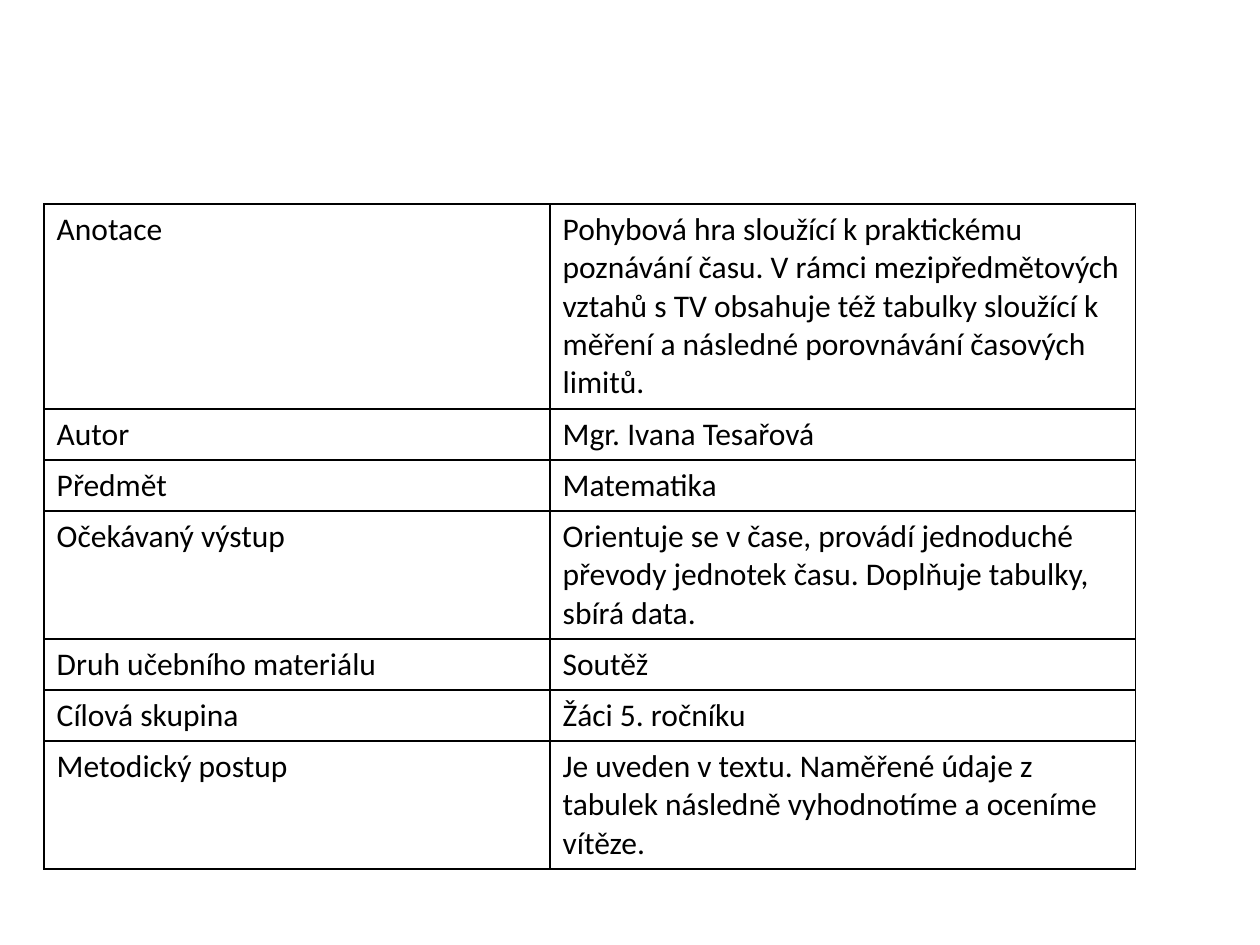
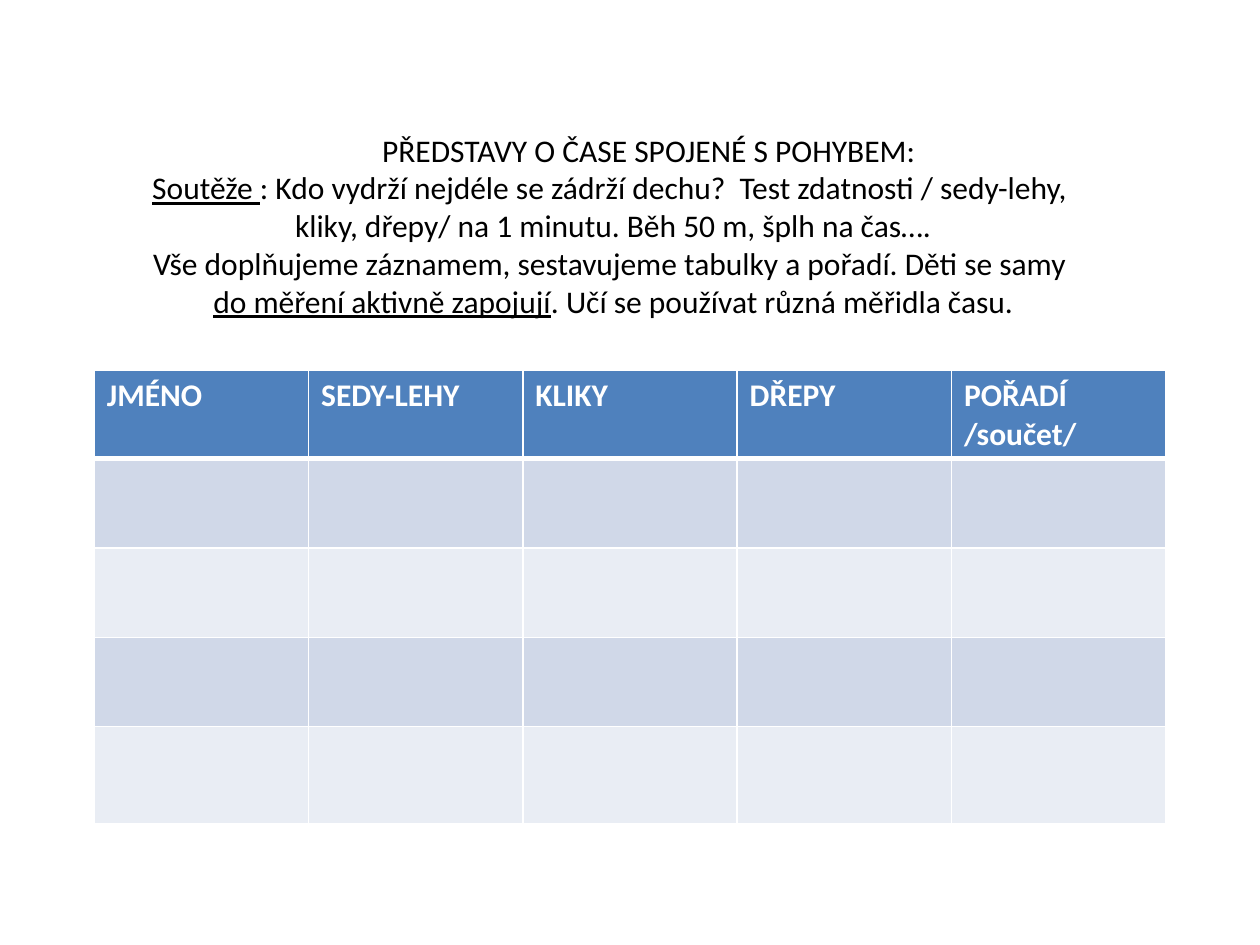
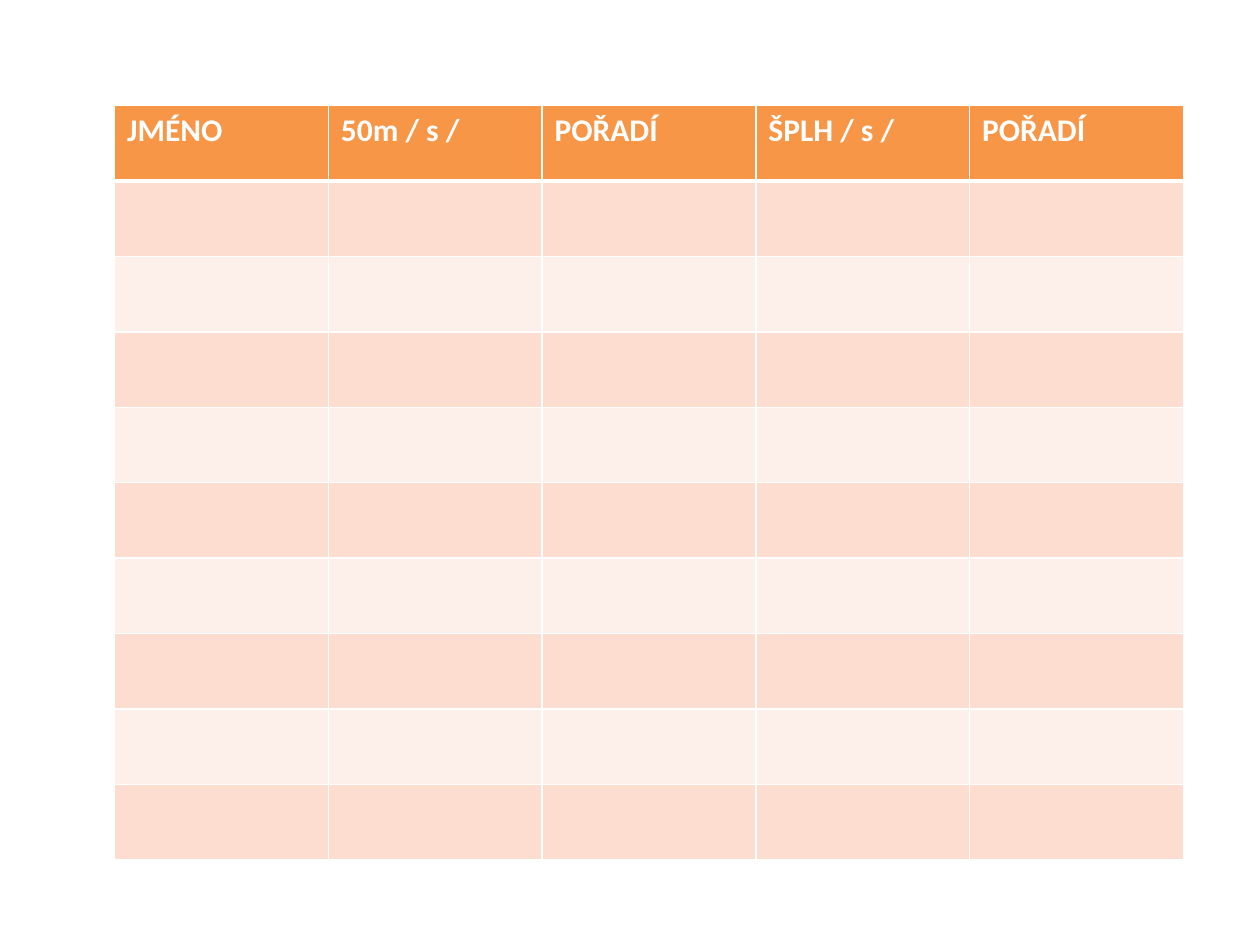
"""Build three slides on measuring time through movement: lesson details and two score tables."""
from lxml import etree
from pptx import Presentation
from pptx.dml.color import RGBColor
from pptx.enum.text import MSO_AUTO_SIZE, PP_ALIGN
from pptx.oxml.ns import qn
from pptx.util import Cm, Pt

CENTER = PP_ALIGN.CENTER
GROW = MSO_AUTO_SIZE.SHAPE_TO_FIT_TEXT
BLACK, WHITE = "000000", "FFFFFF"
TEXT_FORMAT = {"name": "Calibri", "size": Pt(18)}


def format_run(run, color, **extra):
    for name, value in {**TEXT_FORMAT, **extra}.items():
        setattr(run.font, name, value)
    run.font.color.rgb = RGBColor.from_string(color)


def add_border(cell, side, color, points):
    properties = cell._tc.get_or_add_tcPr()
    line = etree.SubElement(properties, qn(f"a:ln{side}"), w=str(Pt(points)))
    fill = etree.SubElement(line, qn("a:solidFill"))
    etree.SubElement(fill, qn("a:srgbClr"), val=color)


lesson_rows = [
    ["Anotace", "Pohybová hra sloužící k praktickému poznávání času. V rámci mezipředmětových vztahů s TV obsahuje též tabulky sloužící k měření a následné porovnávání časových limitů."],
    ["Autor", "Mgr. Ivana Tesařová"],
    ["Předmět", "Matematika"],
    ["Očekávaný výstup", "Orientuje se v čase, provádí jednoduché převody jednotek času. Doplňuje tabulky, sbírá data."],
    ["Druh učebního materiálu", "Soutěž"],
    ["Cílová skupina", "Žáci 5. ročníku"],
    ["Metodický postup", "Je uveden v textu. Naměřené údaje z tabulek následně vyhodnotíme a oceníme vítěze."],
]
exercise_header = ["JMÉNO", "SEDY-LEHY", "KLIKY", "DŘEPY", "POŘADÍ /součet/"]
race_header = ["JMÉNO", "50m / s /", "POŘADÍ", "ŠPLH / s /", "POŘADÍ"]

tables = [
    {"left": 0.89, "top": 4.11, "widths": [10.2, 11.8], "border": BLACK,
     "heights": [4.13, 1.03, 1.03, 2.58, 1.03, 1.03, 2.58],
     "rows": lesson_rows, "header_fill": None, "bands": None},
    {"left": 1.9, "top": 7.47, "widths": [4.32] * 5, "border": WHITE,
     "heights": [1.75, 1.8, 1.8, 1.8, 1.96],
     "rows": [exercise_header] + [[""] * 5] * 4,
     "header_fill": "4F81BD", "bands": ["D0D8E8", "E9EDF4"]},
    {"left": 2.31, "top": 2.13, "widths": [4.31] * 5, "border": WHITE,
     "heights": [1.52] * 10,
     "rows": [race_header] + [[""] * 5] * 9,
     "header_fill": "F79646", "bands": ["FCDDCF", "FDEFE9"]},
]

introduction = [
    [("PŘEDSTAVY O ČASE SPOJENÉ S POHYBEM:", False)],
    [("Soutěže ", True),
     (": Kdo vydrží nejdéle se zádrží dechu?  Test zdatnosti / sedy-lehy, ", False)],
    [("kliky, dřepy/ na 1 minutu. Běh 50 m, šplh na čas….", False)],
    [("Vše doplňujeme záznamem, sestavujeme tabulky a pořadí. Děti se samy ", False)],
    [("do měření aktivně zapojují", True),
     (". Učí se používat různá měřidla času.", False)],
]

presentation = Presentation()
presentation.slide_width, presentation.slide_height = Cm(25.4), Cm(19.05)
blank_layout = presentation.slide_layouts[6]
slides = [presentation.slides.add_slide(blank_layout) for _ in tables]

text_box = slides[1].shapes.add_textbox(Cm(2.69), Cm(2.51), Cm(19.35), Cm(4.88))
text_frame = text_box.text_frame
text_frame.word_wrap = False
text_frame.auto_size = GROW
for index, parts in enumerate(introduction):
    paragraph = text_frame.add_paragraph() if index else text_frame.paragraphs[0]
    paragraph.alignment = CENTER
    for text, underline in parts:
        run = paragraph.add_run()
        run.text = text
        format_run(run, BLACK, underline=underline)
text_frame.paragraphs[0]._p.get_or_add_pPr().set("marL", str(Cm(1.43)))

for slide, spec_table in zip(slides, tables):
    widths, heights = spec_table["widths"], spec_table["heights"]
    has_header = spec_table["header_fill"] is not None
    shape = slide.shapes.add_table(
        len(heights), len(widths), Cm(spec_table["left"]), Cm(spec_table["top"]),
        Cm(sum(widths)), Cm(sum(heights)))
    table = shape.table
    table.first_row = has_header
    table.horz_banding = False
    for column, width in zip(table.columns, widths):
        column.width = Cm(width)
    for row_index, (row, height) in enumerate(zip(table.rows, heights)):
        row.height = Cm(height)
        is_header = has_header and row_index == 0
        top = 3 if has_header and row_index == 1 else 1
        bottom = 3 if is_header else 1
        for cell, text in zip(row.cells, spec_table["rows"][row_index]):
            for side, points in {"L": 1, "R": 1, "T": top, "B": bottom}.items():
                add_border(cell, side, spec_table["border"], points)
            if has_header:
                band = spec_table["bands"][(row_index - 1) % 2]
                cell.fill.solid()
                cell.fill.fore_color.rgb = RGBColor.from_string(
                    spec_table["header_fill"] if is_header else band)
            else:
                cell.fill.background()
            if text:
                run = cell.text_frame.paragraphs[0].add_run()
                run.text = text
                format_run(run, WHITE if is_header else BLACK, bold=is_header)

presentation.save("out.pptx")
